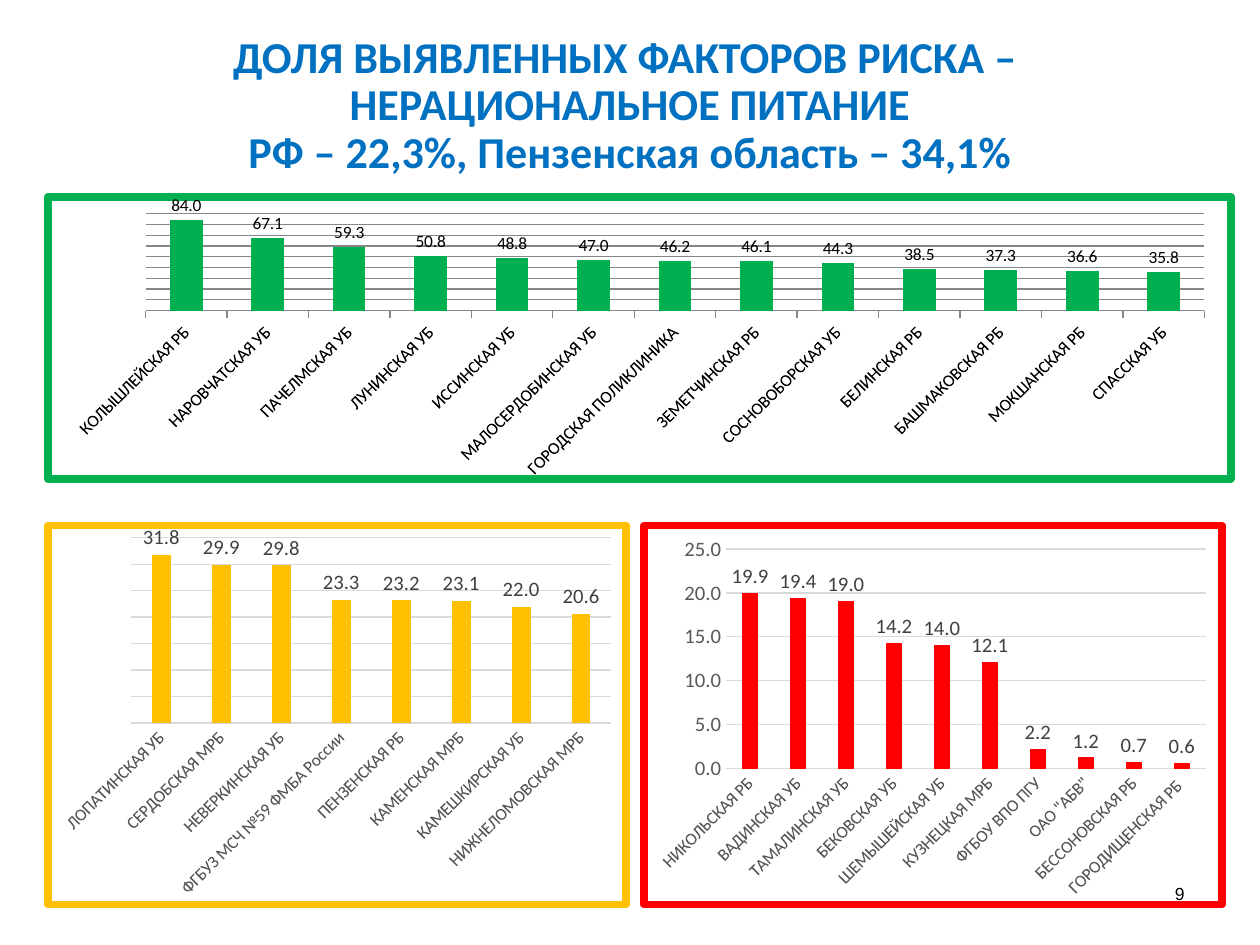
import lxml.etree
import pptx
import pptx.chart.data
import pptx.dml.color
import pptx.enum.chart
import pptx.enum.text
import pptx.oxml
import pptx.oxml.ns
import pptx.util

Inches, Pt = pptx.util.Inches, pptx.util.Pt
qn = pptx.oxml.ns.qn
TICK = pptx.enum.chart.XL_TICK_MARK
ALIGN = pptx.enum.text.PP_ALIGN

TITLE = [
    "ДОЛЯ ВЫЯВЛЕННЫХ ФАКТОРОВ РИСКА – ",
    "НЕРАЦИОНАЛЬНОЕ ПИТАНИЕ",
    "РФ – 22,3%, Пензенская область – 34,1%",
]
HIGH = {
    "КОЛЫШЛЕЙСКАЯ РБ": 84, "НАРОВЧАТСКАЯ УБ": 67.1, "ПАЧЕЛМСКАЯ УБ": 59.3,
    "ЛУНИНСКАЯ УБ": 50.8, "ИССИНСКАЯ УБ": 48.8, "МАЛОСЕРДОБИНСКАЯ УБ": 47,
    "ГОРОДСКАЯ ПОЛИКЛИНИКА": 46.2, "ЗЕМЕТЧИНСКАЯ РБ": 46.1,
    "СОСНОВОБОРСКАЯ УБ": 44.3, "БЕЛИНСКАЯ РБ": 38.5, "БАШМАКОВСКАЯ РБ": 37.3,
    "МОКШАНСКАЯ РБ": 36.6, "СПАССКАЯ УБ": 35.8,
}
MIDDLE = {
    "ЛОПАТИНСКАЯ УБ": 31.8, "СЕРДОБСКАЯ МРБ": 29.9, "НЕВЕРКИНСКАЯ УБ": 29.8,
    "ФГБУЗ МСЧ №59 ФМБА России": 23.3, "ПЕНЗЕНСКАЯ РБ": 23.2,
    "КАМЕНСКАЯ МРБ": 23.1, "КАМЕШКИРСКАЯ УБ": 22, "НИЖНЕЛОМОВСКАЯ МРБ": 20.6,
}
LOW = {
    "НИКОЛЬСКАЯ РБ": 19.9, "ВАДИНСКАЯ УБ": 19.4, "ТАМАЛИНСКАЯ УБ": 19,
    "БЕКОВСКАЯ УБ": 14.2, "ШЕМЫШЕЙСКАЯ УБ": 14, "КУЗНЕЦКАЯ МРБ": 12.1,
    "ФГБОУ ВПО ПГУ": 2.2, 'ОАО "АБВ"': 1.2, "БЕССОНОВСКАЯ РБ": 0.7,
    "ГОРОДИЩЕНСКАЯ РБ ": 0.6,
}


def color(code):
    """Turn a hex string into a colour."""
    return pptx.dml.color.RGBColor.from_string(code)


def style(font, size, code, name="Calibri", bold=False):
    """Set the look of a font."""
    font.size, font.name, font.bold = Pt(size), name, bold
    font.color.rgb = color(code)


def stroke(line, code, width=0.75):
    """Set the colour and width of a line."""
    line.color.rgb = color(code)
    line.width = Pt(width)


def add_text(slide, box, lines, align):
    """Place a text box of one paragraph and return the paragraph."""
    frame = slide.shapes.add_textbox(*map(Inches, box)).text_frame
    frame.word_wrap = True
    frame.vertical_anchor = pptx.enum.text.MSO_ANCHOR.MIDDLE
    para = frame.paragraphs[0]
    para.alignment = align
    for num, text in enumerate(lines):
        if num:
            para.add_line_break()
        para.add_run().text = text
    return para


def add_title(slide, box):
    """Place the heading."""
    para = add_text(slide, box, TITLE, ALIGN.CENTER)
    para.line_spacing = 0.9
    style(para.font, 25.2, "0070C0", bold=True)


def add_number(slide, box):
    """Place the page number."""
    para = add_text(slide, box, ["9"], ALIGN.RIGHT)
    style(para.font, 10, "000000", "Arial")


def set_frame(chart, code):
    """Draw a thick border around the chart."""
    xml = (
        f'<c:spPr {pptx.oxml.ns.nsdecls("c", "a")}><a:noFill/><a:ln w="{Pt(4.5)}">'
        f'<a:solidFill><a:srgbClr val="{code}"/></a:solidFill><a:round/></a:ln></c:spPr>'
    )
    chart._chartSpace.find(qn("c:chart")).addnext(pptx.oxml.parse_xml(xml))


def set_plot(chart, box, plot):
    """Fix the inner plot area, given in inches from the corner of the box."""
    area = chart._chartSpace.find(".//" + qn("c:plotArea"))
    for old in area.findall(qn("c:layout")):
        area.remove(old)
    layout = lxml.etree.Element(qn("c:layout"))
    manual = lxml.etree.SubElement(layout, qn("c:manualLayout"))
    rules = {"layoutTarget": "inner", "xMode": "edge", "yMode": "edge"}
    for num, key in enumerate("xywh"):
        rules[key] = f"{plot[num] / box[2 + num % 2]:.4f}"
    for key, val in rules.items():
        lxml.etree.SubElement(manual, qn("c:" + key)).set("val", val)
    area.insert(0, layout)


def add_bars(slide, box, plot, data, code, top, step, soft=True, scale=False):
    """Place a framed column chart with slanted category names."""
    table = pptx.chart.data.CategoryChartData(number_format="0.0")
    table.categories = list(data)
    table.add_series("Series 1", list(data.values()))
    kind = pptx.enum.chart.XL_CHART_TYPE.COLUMN_CLUSTERED
    chart = slide.shapes.add_chart(kind, *map(Inches, box), table).chart
    chart.has_legend = chart.has_title = False
    style(chart.font, 10, "000000")
    set_frame(chart, code)
    set_plot(chart, box, plot)

    bars = chart.plots[0]
    bars.vary_by_categories = False
    bars.gap_width = 219 if soft else 150
    bars.overlap = -27 if soft else 0
    fill = bars.series[0].format.fill
    fill.solid()
    fill.fore_color.rgb = color(code)
    if scale:
        stroke(bars.series[0].format.line, code)
    bars.has_data_labels = True
    labels = bars.data_labels
    labels.show_value = True
    labels.number_format, labels.number_format_is_linked = "0.0", False
    labels.position = pptx.enum.chart.XL_LABEL_POSITION.OUTSIDE_END
    style(labels.font, 12 if soft else 10, "404040" if soft else "000000")

    names, values = chart.category_axis, chart.value_axis
    names.major_tick_mark = TICK.NONE if soft else TICK.OUTSIDE
    style(names.tick_labels.font, 10, "595959" if soft else "000000")
    names._element.find(".//" + qn("a:bodyPr")).set("rot", "-2700000")
    values.minimum_scale, values.maximum_scale = 0, top
    values.major_unit = step
    values.major_tick_mark = TICK.NONE
    values.visible = scale
    if scale:
        style(values.tick_labels.font, 12, "595959")
        values.tick_labels.number_format = "0.0"
        values.tick_labels.number_format_is_linked = False
        values.format.line.fill.background()
    values.has_major_gridlines = True
    for line in (names.format.line, values.major_gridlines.format.line):
        stroke(line, "D9D9D9" if soft else "868686")


def main():
    """Build the slide and save it."""
    deck = pptx.Presentation()
    deck.slide_width, deck.slide_height = Inches(10), Inches(7.5)
    slide = deck.slides.add_slide(deck.slide_layouts[6])
    add_title(slide, (0.5, 0.3, 9, 1.09))
    add_bars(slide, (0.35, 4.14, 4.65, 3.07), (0.67, 0.1, 3.86, 1.5),
             MIDDLE, "FFC000", 35, 5)
    add_bars(slide, (0.35, 1.53, 9.45, 2.3), (0.78, 0.14, 8.46, 0.79),
             HIGH, "00B050", 90, 10, soft=False)
    add_bars(slide, (5.08, 4.14, 4.65, 3.07), (0.66, 0.19, 3.86, 1.78),
             LOW, "FF0000", 25, 5, scale=True)
    add_number(slide, (7.17, 6.83, 2.33, 0.52))
    deck.save("out.pptx")


if __name__ == "__main__":
    main()
